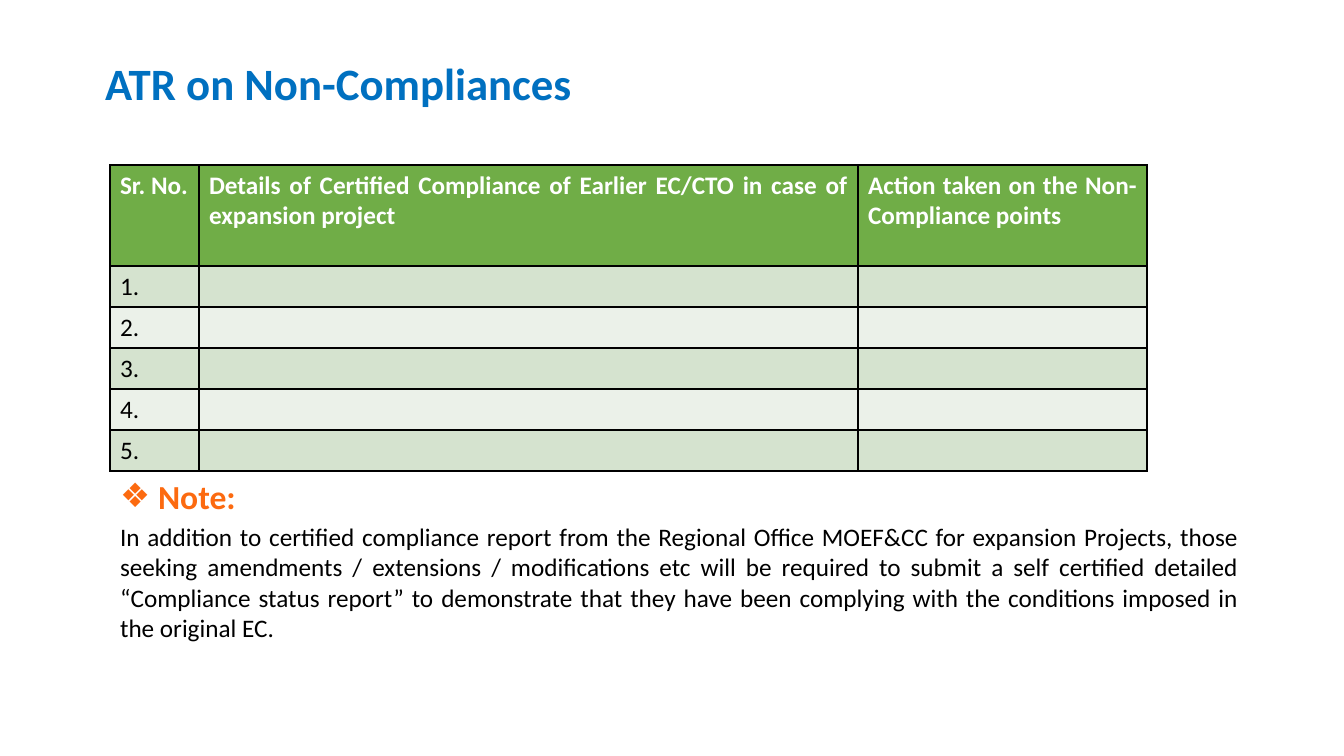
import lxml.etree
import pptx
import pptx.dml.color
import pptx.enum.text
import pptx.oxml.ns
import pptx.util

EMU_PER_PX = 914400 / 100.8
ALIGN = pptx.enum.text.PP_ALIGN
ANCHOR = pptx.enum.text.MSO_ANCHOR

HEADERS = [
    "Sr. No.",
    "Details of Certified Compliance of Earlier EC/CTO in case of expansion project",
    "Action taken on the Non-Compliance points",
]
COLUMN_WIDTHS = [89, 659, 289]
HEADER_HEIGHT, ROW_HEIGHT, ROW_COUNT = 101, 41, 5
NOTE = (
    "In addition to certified compliance report from the Regional Office MOEF&CC "
    "for expansion Projects, those seeking amendments / extensions / modifications etc "
    "will be required to submit a self certified detailed “Compliance status report” "
    "to demonstrate that they have been complying with the conditions imposed in "
    "the original EC."
)


def px(length):
    return pptx.util.Emu(round(length * EMU_PER_PX))


def rgb(color):
    return pptx.dml.color.RGBColor.from_string(color)


def add_element(parent, tag, **attributes):
    return lxml.etree.SubElement(parent, pptx.oxml.ns.qn(tag), attributes)


def write(paragraph, text, size=18, color="000000", bold=False, align=ALIGN.LEFT,
          font="Calibri", space_before=0):
    paragraph.alignment = align
    paragraph.line_spacing = 1.0
    paragraph.space_before = pptx.util.Pt(space_before)
    run = paragraph.add_run()
    run.text = text
    run.font.name = font
    run.font.size = pptx.util.Pt(size)
    run.font.bold = bold
    run.font.color.rgb = rgb(color)


def set_bullet(paragraph, character=None, indent=0):
    properties = paragraph._p.get_or_add_pPr()
    properties.set("marL", str(px(indent)))
    properties.set("indent", str(-px(indent)))
    if character:
        add_element(properties, "a:buChar", char=character)
    else:
        add_element(properties, "a:buNone")


class ComplianceSlide:
    title_color = "0070C0"
    note_color = "FC6A10"
    header_fill = "70AD47"
    band_fills = ["D5E3CF", "EBF1E9"]
    border_color = "000000"

    def __init__(self, presentation):
        self.slide = presentation.slides.add_slide(presentation.slide_layouts[1])

    def place(self, shape, left, top, width, height):
        """Move a placeholder and return its text frame, set to start at the top."""
        shape.left, shape.top = px(left), px(top)
        shape.width, shape.height = px(width), px(height)
        frame = shape.text_frame
        frame.word_wrap = True
        frame.auto_size = pptx.enum.text.MSO_AUTO_SIZE.NONE
        frame.vertical_anchor = ANCHOR.TOP
        return frame

    def title(self, text, *box):
        frame = self.place(self.slide.shapes.title, *box)
        write(frame.paragraphs[0], text, size=32, color=self.title_color, bold=True)

    def note(self, heading, text, *box):
        frame = self.place(self.slide.placeholders[1], *box)
        first = frame.paragraphs[0]
        write(first, heading, size=24, color=self.note_color, bold=True, align=ALIGN.JUSTIFY)
        set_bullet(first, "❖", indent=38)
        second = frame.add_paragraph()
        write(second, text, align=ALIGN.JUSTIFY, space_before=3.6)
        set_bullet(second)

    def cell(self, cell, fill, text="", **text_format):
        properties = cell._tc.get_or_add_tcPr()
        for side in ("a:lnL", "a:lnR", "a:lnT", "a:lnB"):
            line = add_element(properties, side, w=str(pptx.util.Pt(1)))
            add_element(add_element(line, "a:solidFill"), "a:srgbClr", val=self.border_color)
        cell.fill.solid()
        cell.fill.fore_color.rgb = rgb(fill)
        if text:
            write(cell.text_frame.paragraphs[0], text, **text_format)

    def table(self, left, top):
        height = HEADER_HEIGHT + ROW_COUNT * ROW_HEIGHT
        table = self.slide.shapes.add_table(
            ROW_COUNT + 1, len(HEADERS), px(left), px(top), px(sum(COLUMN_WIDTHS)), px(height)
        ).table
        for column, width in zip(table.columns, COLUMN_WIDTHS):
            column.width = px(width)
        for index, row in enumerate(table.rows):
            row.height = px(ROW_HEIGHT if index else HEADER_HEIGHT)
        for column, header in enumerate(HEADERS):
            self.cell(table.cell(0, column), self.header_fill, header, color="FFFFFF",
                      bold=True, align=ALIGN.JUSTIFY if column else ALIGN.LEFT)
        for row in range(1, ROW_COUNT + 1):
            fill = self.band_fills[(row - 1) % 2]
            for column in range(len(HEADERS)):
                self.cell(table.cell(row, column), fill, "" if column else f"{row}.")


def main():
    presentation = pptx.Presentation()
    presentation.slide_width, presentation.slide_height = px(1344), px(756)
    page = ComplianceSlide(presentation)
    page.title("ATR on Non-Compliances", 95, 51, 974, 65)
    page.note("Note:", NOTE, 110, 471, 1139, 189)
    page.table(110, 165)
    presentation.save("out.pptx")


if __name__ == "__main__":
    main()
